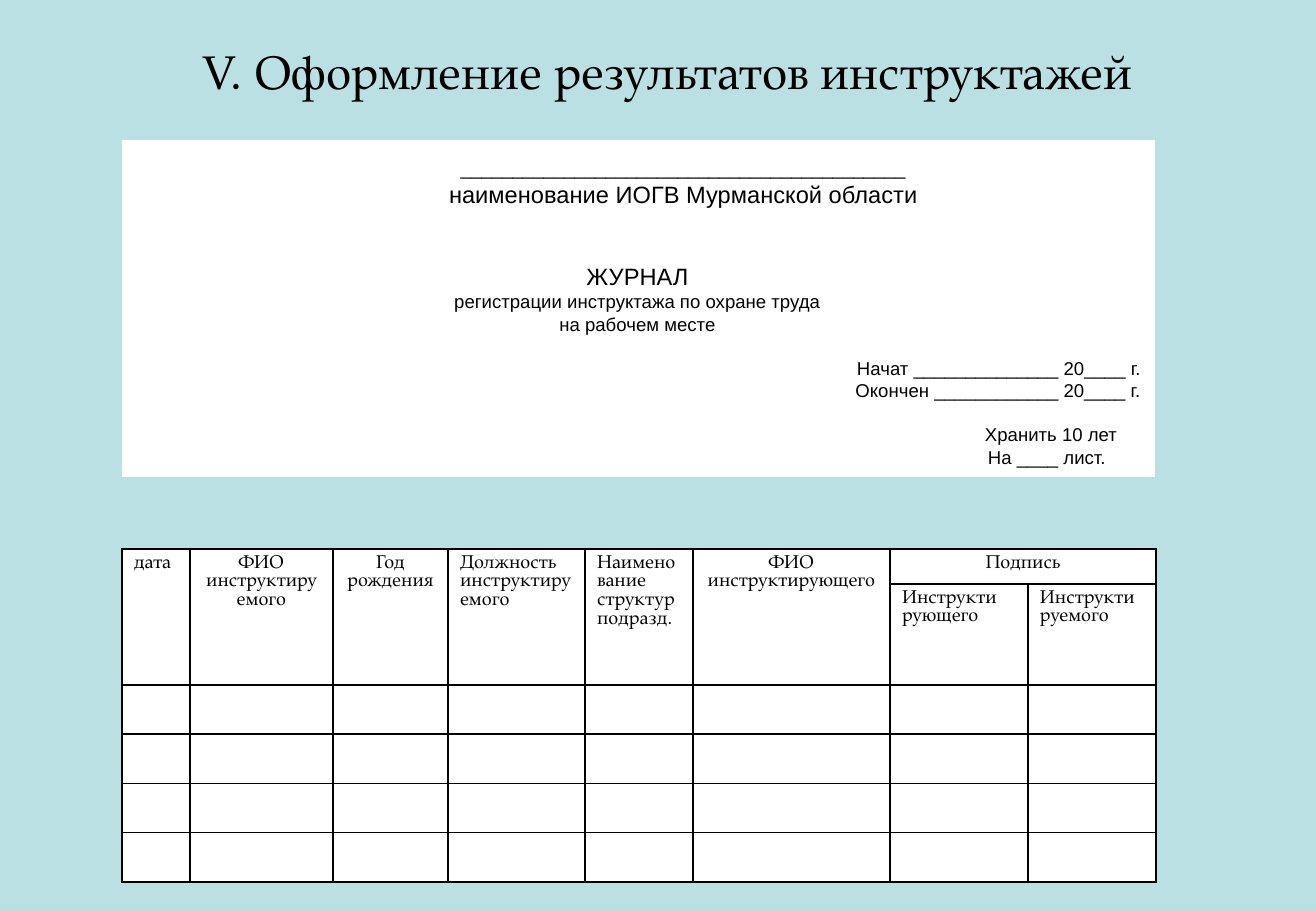
from lxml import etree
from pptx import Presentation
from pptx import util as u
from pptx.dml.color import RGBColor
from pptx.enum import shapes, text
from pptx.oxml import ns

BLACK = RGBColor(0x00, 0x00, 0x00)
WHITE = RGBColor(0xFF, 0xFF, 0xFF)
AQUA = RGBColor(0xBB, 0xE0, 0xE3)

SERIF, SANS = "TeX Gyre Pagella", "Arial"
LEFT = text.PP_ALIGN.LEFT
CENTER = text.PP_ALIGN.CENTER
RIGHT = text.PP_ALIGN.RIGHT
PX_PER_INCH = 121.5

# Wording, size, indent in px, paragraph format
COVER_LINES = [
    ("_" * 43, 11, 92, {"alignment": CENTER}),
    ("наименование ИОГВ Мурманской области", 14, 92,
     {"alignment": CENTER, "space_before": u.Pt(1)}),
    ("ЖУРНАЛ", 14, 0, {"alignment": CENTER, "space_before": u.Pt(32.5)}),
    ("регистрации инструктажа по охране труда", 11, 0, {"alignment": CENTER}),
    ("на рабочем месте", 11, 0, {"alignment": CENTER}),
    ("Начат ______________ 20____ г.", 11, 0,
     {"alignment": RIGHT, "space_before": u.Pt(13)}),
    ("Окончен ____________ 20____ г.", 11, 0, {"alignment": RIGHT}),
    ("Хранить 10 лет", 11, 851, {"alignment": LEFT, "space_before": u.Pt(13)}),
    ("На ____ лист.", 11, 854, {"alignment": LEFT}),
]
LINE_HEIGHT = {11: 13.2, 14: 16.1}

COLUMNS = [68, 143, 115, 137, 108, 197, 138, 128]
ROWS = [35, 101] + [49] * 4
# Row, column, alignment, paragraphs
HEADINGS = [
    (0, 0, LEFT, ["дата"]),
    (0, 1, CENTER, ["ФИО инструктируемого"]),
    (0, 2, CENTER, ["Год", "рождения"]),
    (0, 3, LEFT, ["Должность", "инструктируемого"]),
    (0, 4, LEFT, ["Наименование", "структур подразд."]),
    (0, 5, CENTER, ["ФИО", "инструктирующего"]),
    (0, 6, CENTER, ["Подпись"]),
    (1, 6, LEFT, ["Инструкти", "рующего"]),
    (1, 7, LEFT, ["Инструкти", "руемого"]),
]
MERGES = [(0, column, 1, column) for column in range(6)] + [(0, 6, 0, 7)]


def px(length):
    return u.Emu(round(length * u.Inches(1) / PX_PER_INCH))


def apply(target, values):
    for name, value in values.items():
        setattr(target, name, value)


class Page:
    """The current slide and its style."""

    def __init__(self, deck):
        self.slide = deck.slides.add_slide(deck.slide_layouts[5])
        fill = self.slide.background.fill
        fill.solid()
        fill.fore_color.rgb = AQUA

    def add_span(self, para, wording, size, font, values):
        apply(para, values)
        span = para.add_run()
        span.text = wording
        apply(span.font, {"name": font, "size": u.Pt(size)})
        span.font.color.rgb = BLACK

    def paragraphs(self, frame, count):
        """Return the paragraphs of a frame extended to the given count."""
        return [frame.paragraphs[0]] + [frame.add_paragraph() for _ in range(count - 1)]

    def title(self, wording, left, top, width, height):
        box = self.slide.shapes.title
        apply(box, {"left": px(left), "top": px(top),
                    "width": px(width), "height": px(height)})
        apply(box.text_frame, {"word_wrap": True,
                               "auto_size": text.MSO_AUTO_SIZE.NONE,
                               "vertical_anchor": text.MSO_ANCHOR.MIDDLE})
        self.add_span(box.text_frame.paragraphs[0], wording, 28, SERIF,
                      {"alignment": CENTER})

    def card(self, lines, left, top, width, height):
        box = self.slide.shapes.add_shape(shapes.MSO_SHAPE.RECTANGLE, px(left),
                                          px(top), px(width), px(height))
        box.shadow.inherit = False
        box.fill.solid()
        box.fill.fore_color.rgb = WHITE
        box.line.fill.background()
        apply(box.text_frame, {"word_wrap": True, "margin_top": px(17),
                               "margin_left": px(12), "margin_right": px(14),
                               "vertical_anchor": text.MSO_ANCHOR.TOP})
        paras = self.paragraphs(box.text_frame, len(lines))
        for para, (wording, size, indent, values) in zip(paras, lines):
            spacing = {"line_spacing": u.Pt(LINE_HEIGHT[size])}
            self.add_span(para, wording, size, SANS, values | spacing)
            if indent:
                para._p.get_or_add_pPr().set("marL", str(px(indent)))

    def table(self, columns, rows, merges, headings, left, top):
        frame = self.slide.shapes.add_table(len(rows), len(columns), px(left),
                                            px(top), px(sum(columns)), px(sum(rows)))
        grid = frame.table
        apply(grid, {"first_row": False, "horz_banding": False})
        for column, width in zip(grid.columns, columns):
            column.width = px(width)
        for row, height in zip(grid.rows, rows):
            row.height = px(height)
        for cell in grid.iter_cells():
            self.border(cell)
            cell.fill.solid()
            cell.fill.fore_color.rgb = WHITE
        for top_row, first, bottom_row, last in merges:
            grid.cell(top_row, first).merge(grid.cell(bottom_row, last))
        for row, column, alignment, wordings in headings:
            paras = self.paragraphs(grid.cell(row, column).text_frame, len(wordings))
            for para, wording in zip(paras, wordings):
                self.add_span(para, wording, 11, SERIF,
                              {"alignment": alignment, "line_spacing": u.Pt(11)})

    def border(self, cell):
        properties = cell._tc.get_or_add_tcPr()
        for side in ("lnL", "lnR", "lnT", "lnB"):
            line = etree.SubElement(properties, ns.qn(f"a:{side}"), w=str(u.Pt(1)))
            fill = etree.SubElement(line, ns.qn("a:solidFill"))
            etree.SubElement(fill, ns.qn("a:srgbClr"), val=str(BLACK))


def main():
    deck = Presentation()
    apply(deck, {"slide_width": px(1316), "slide_height": px(911)})
    page = Page(deck)
    page.title("V. Оформление результатов инструктажей", 122, 36, 1091, 70)
    page.card(COVER_LINES, 122, 140, 1033, 337)
    page.table(COLUMNS, ROWS, MERGES, HEADINGS, 122, 549)
    deck.save("out.pptx")


if __name__ == "__main__":
    main()
